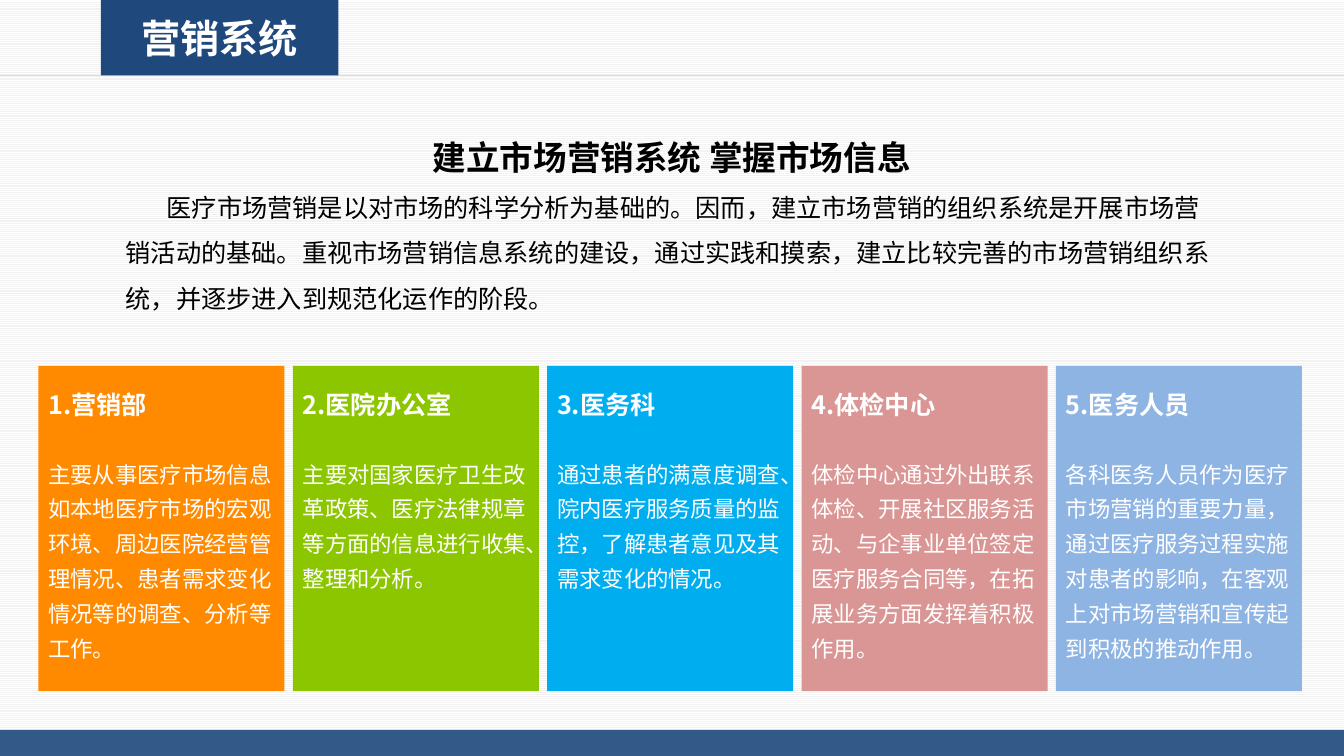
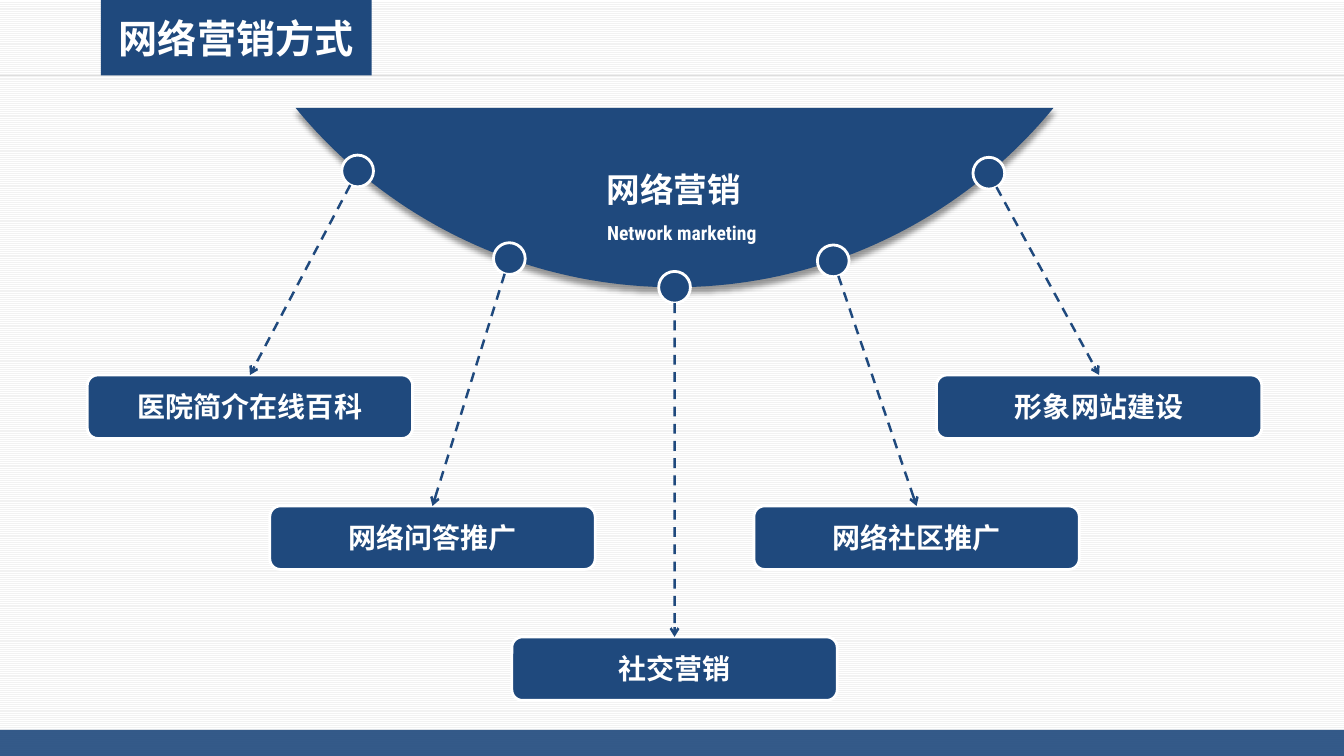
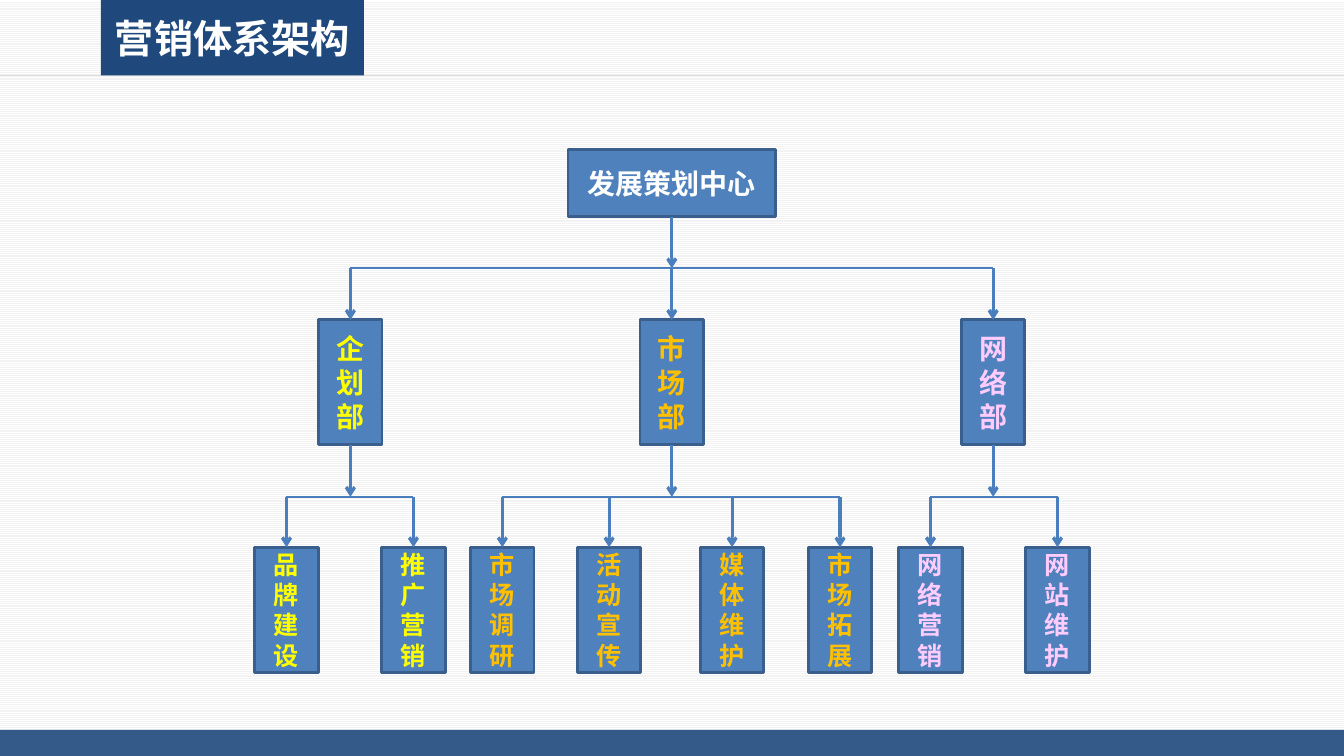
from math import asin, cos, hypot, radians, sin

from pptx import Presentation
from pptx.dml.color import RGBColor
from pptx.enum.dml import MSO_LINE, MSO_PATTERN
from pptx.enum.shapes import MSO_CONNECTOR, MSO_SHAPE
from pptx.enum.text import MSO_ANCHOR, PP_ALIGN
from pptx.oxml.ns import qn
from pptx.oxml.xmlchemy import OxmlElement
from pptx.util import Cm, Pt

FONT = "Noto Sans CJK SC"
NAVY, WHITE, BLACK = "1F497D", "FFFFFF", "000000"
BOX_FILL, BOX_LINE, ARROW = "4F81BD", "3A5F8C", "4B7EBC"
SLIDE_WIDTH, SLIDE_HEIGHT = 33.87, 19.05
HEADER_HEIGHT, FOOTER_HEIGHT = 1.9, 0.66
TOP, BOTTOM = 0, 2


def color(hex_text):
    return RGBColor.from_string(hex_text)


def append_element(parent, tag, **attributes):
    element = OxmlElement(tag)
    for name, value in attributes.items():
        element.set(name, str(value))
    parent.append(element)
    return element


def set_opacity(shape, percent):
    for color_element in shape._element.spPr.iter(qn("a:srgbClr")):
        append_element(color_element, "a:alpha", val=percent * 1000)


def write(shape, texts, size, text_color=WHITE, bold=True, font=FONT,
          align=PP_ALIGN.CENTER, spacing=None):
    """Fill the shape with one paragraph for each text."""
    frame = shape.text_frame
    frame.word_wrap = True
    frame.text = "\n".join(texts)
    for paragraph in frame.paragraphs:
        paragraph.alignment = align
        if spacing:
            paragraph.line_spacing = spacing
        for run in paragraph.runs:
            format_run(run, size, text_color, bold, font)


def format_run(run, size, text_color, bold, font=FONT):
    run.font.size = Pt(size)
    run.font.bold = bold
    run.font.color.rgb = color(text_color)
    run.font.name = font
    properties = run._r.get_or_add_rPr()
    if properties.find(qn("a:ea")) is None:
        append_element(properties, "a:ea", typeface=FONT)


def style(shape, fill, line=None):
    shape.shadow.inherit = False
    shape.fill.solid()
    shape.fill.fore_color.rgb = color(fill)
    if line:
        shape.line.color.rgb = color(line)
        shape.line.width = Pt(2)
    else:
        shape.line.fill.background()


def add_box(slide, left, top, width, height, fill, line=None,
            kind=MSO_SHAPE.RECTANGLE):
    shape = slide.shapes.add_shape(kind, Cm(left), Cm(top), Cm(width), Cm(height))
    style(shape, fill, line)
    shape.text_frame.vertical_anchor = MSO_ANCHOR.MIDDLE
    return shape


def add_text(slide, left, top, width, height, texts, size, **options):
    box = slide.shapes.add_textbox(Cm(left), Cm(top), Cm(width), Cm(height))
    write(box, texts, size, **options)
    return box


def add_line(slide, start, end, line_color, width, arrow=False, dash=None,
             source=None, target=None):
    """Draw a line, joined to the bottom of source and the top of target."""
    line = slide.shapes.add_connector(
        MSO_CONNECTOR.STRAIGHT, *(Cm(value) for value in (*start, *end)))
    if source:
        line.begin_connect(source, BOTTOM)
    if target:
        line.end_connect(target, TOP)
    line.line.color.rgb = color(line_color)
    line.line.width = Pt(width)
    if dash:
        line.line.dash_style = dash
    if arrow:
        append_element(line.line._get_or_add_ln(), "a:tailEnd", type="arrow")
    append_element(line._element.spPr, "a:effectLst")
    return line


def add_slide(presentation, title, title_width):
    slide = presentation.slides.add_slide(presentation.slide_layouts[6])
    rule = add_line(slide, (0, HEADER_HEIGHT), (SLIDE_WIDTH, HEADER_HEIGHT),
                    "BFBFBF", 0.75)
    set_opacity(rule, 50)
    band = add_box(slide, 2.54, 0, title_width, HEADER_HEIGHT, NAVY)
    write(band, [title], 28)
    footer = add_box(slide, 0, SLIDE_HEIGHT - FOOTER_HEIGHT, SLIDE_WIDTH,
                     FOOTER_HEIGHT, NAVY)
    set_opacity(footer, 90)
    return slide


def add_card(slide, left, fill, heading, body):
    width = 6.2
    add_box(slide, left, 9.22, width, 8.2, fill)
    add_text(slide, left, 9.42, width, 1.2, [heading], 18,
             align=PP_ALIGN.LEFT, spacing=1.35)
    add_text(slide, left, 11.28, width, 5.6, [body], 16, bold=False,
             align=PP_ALIGN.LEFT, spacing=1.3)


def build_marketing_system(presentation):
    slide = add_slide(presentation, "营销系统", 5.99)
    intro = add_text(slide, 2.92, 2.82, 28.02, 5.26, [
        "建立市场营销系统 掌握市场信息",
        "医疗市场营销是以对市场的科学分析为基础的。因而，建立市场营销的组织系统是开展市场营销活动的基础。"
        "重视市场营销信息系统的建设，通过实践和摸索，建立比较完善的市场营销组织系统，并逐步进入到规范化运作的阶段。",
    ], 24, text_color=BLACK, spacing=1.5)
    body = intro.text_frame.paragraphs[1]
    body.alignment = PP_ALIGN.LEFT
    body._p.get_or_add_pPr().set("indent", str(Cm(1.03)))
    format_run(body.runs[0], 18, BLACK, False)

    cards = [
        ("FF8A00", "1.营销部",
         "主要从事医疗市场信息如本地医疗市场的宏观环境、周边医院经营管理情况、患者需求变化情况等的调查、分析等工作。"),
        ("8CC600", "2.医院办公室",
         "主要对国家医疗卫生改革政策、医疗法律规章等方面的信息进行收集、整理和分析。"),
        ("00AEEF", "3.医务科",
         "通过患者的满意度调查、院内医疗服务质量的监控，了解患者意见及其需求变化的情况。"),
        ("D99694", "4.体检中心",
         "体检中心通过外出联系体检、开展社区服务活动、与企事业单位签定医疗服务合同等，在拓展业务方面发挥着积极作用。"),
        ("8EB4E3", "5.医务人员",
         "各科医务人员作为医疗市场营销的重要力量，通过医疗服务过程实施对患者的影响，在客观上对市场营销和宣传起到积极的推动作用。"),
    ]
    for index, card in enumerate(cards):
        add_card(slide, 0.97 + 6.41 * index, *card)


def add_bowl(slide, point_at, half_angle):
    """Draw the shaded circle segment below the chord."""
    steps = 80
    points = [tuple(Cm(value) for value in
                    point_at(half_angle * (2 * step / steps - 1)))
              for step in range(steps + 1)]
    builder = slide.shapes.build_freeform(*points[0])
    builder.add_line_segments(points[1:], close=True)
    bowl = builder.convert_to_shape()
    style(bowl, NAVY)
    effects = bowl._element.spPr.find(qn("a:effectLst"))
    shadow = append_element(effects, "a:outerShdw", blurRad=Pt(4), dist=Pt(3),
                            dir=90 * 60000, algn="t", rotWithShape=0)
    shade = append_element(shadow, "a:srgbClr", val=BLACK)
    append_element(shade, "a:alpha", val=40000)


def add_channel(slide, dot_center, left, top, label):
    """Draw a dot on the arc and an arrow from it to its label."""
    width, radius = 8.2, 0.4
    x, y = dot_center
    add_box(slide, x - radius, y - radius, 2 * radius, 2 * radius, NAVY, WHITE,
            MSO_SHAPE.OVAL)
    box = add_box(slide, left, top, width, 1.6, NAVY, WHITE,
                  MSO_SHAPE.ROUNDED_RECTANGLE)
    write(box, [label], 20)
    end = (left + width / 2, top)
    reach = radius / hypot(end[0] - x, end[1] - y)
    start = (x + (end[0] - x) * reach, y + (end[1] - y) * reach)
    add_line(slide, start, end, NAVY, 1.75, arrow=True, dash=MSO_LINE.DASH,
             target=box)


def build_network_marketing(presentation):
    slide = add_slide(presentation, "网络营销方式", 6.83)
    center_x, chord_top, half_chord, depth = 17, 2.72, 9.55, 4.52
    radius = (half_chord ** 2 + depth ** 2) / (2 * depth)
    center_y = chord_top + depth - radius

    def point_at(angle):
        return center_x + radius * sin(angle), center_y + radius * cos(angle)

    add_bowl(slide, point_at, asin(half_chord / radius))
    add_text(slide, 14.68, 4.14, 4.6, 1.27, ["网络营销"], 24, font="Calibri")
    add_text(slide, 14.63, 5.44, 5.11, 0.86, ["Network marketing"], 14,
             font="Roboto Condensed")

    channels = [
        (-40.3, 2.2, 0, "医院简介在线百科"),
        (-19.7, 6.8, 1, "网络问答推广"),
        (0, 12.9, 2, "社交营销"),
        (18.9, 19, 1, "网络社区推广"),
        (39.9, 23.6, 0, "形象网站建设"),
    ]
    for degrees, left, level, label in channels:
        add_channel(slide, point_at(radians(degrees)), left, 9.45 + 3.3 * level,
                    label)


def add_unit(slide, center, top, width, height, label, size, text_color):
    box = add_box(slide, center - width / 2, top, width, height, BOX_FILL, BOX_LINE)
    write(box, [label], size, text_color)
    return box


def add_branch(slide, parent, bar_top, children):
    """Link a parent box to its child boxes through a horizontal bar."""
    parent_x = (parent.left + parent.width / 2) / Cm(1)
    centers = [(child.left + child.width / 2) / Cm(1) for child in children]
    add_line(slide, (parent_x, 0), (parent_x, bar_top), ARROW, 2.25, arrow=True,
             source=parent)
    add_line(slide, (centers[0], bar_top), (centers[-1], bar_top), ARROW, 1.5)
    for center, child in zip(centers, children):
        add_line(slide, (center, bar_top), (center, bar_top), ARROW, 2.25,
                 arrow=True, target=child)


def build_organization(presentation):
    slide = add_slide(presentation, "营销体系架构", 6.63)
    middle, unit_width, unit_height = 16.93, 1.6, 3.15
    root = add_unit(slide, middle, 3.76, 5.23, 1.7, "发展策划中心", 20, WHITE)
    departments = [
        ("企划部", "FFFF00", [(7.22, "品牌建设"), (10.42, "推广营销")]),
        ("市场部", "FFC000", [(12.66, "市场调研"), (15.35, "活动宣传"),
                           (18.45, "媒体维护"), (21.17, "市场拓展")]),
        ("网络部", "FFCCFF", [(23.45, "网络营销"), (26.65, "网站维护")]),
    ]
    department_boxes = []
    for index, (name, text_color, teams) in enumerate(departments):
        department = add_unit(slide, middle + 8.1 * (index - 1), 8.06, unit_width,
                              unit_height, name, 20, text_color)
        department_boxes.append(department)
        team_boxes = [add_unit(slide, center, 13.79, unit_width, unit_height,
                               team, 18, text_color) for center, team in teams]
        add_branch(slide, department, 12.52, team_boxes)
    add_branch(slide, root, 6.76, department_boxes)


def main():
    presentation = Presentation()
    presentation.slide_width = Cm(SLIDE_WIDTH)
    presentation.slide_height = Cm(SLIDE_HEIGHT)
    background = presentation.slide_master.background.fill
    background.patterned()
    background.pattern = MSO_PATTERN.LIGHT_HORIZONTAL
    background.fore_color.rgb = color("F2F2F2")
    background.back_color.rgb = color(WHITE)
    build_marketing_system(presentation)
    build_network_marketing(presentation)
    build_organization(presentation)
    presentation.save("out.pptx")


if __name__ == "__main__":
    main()
